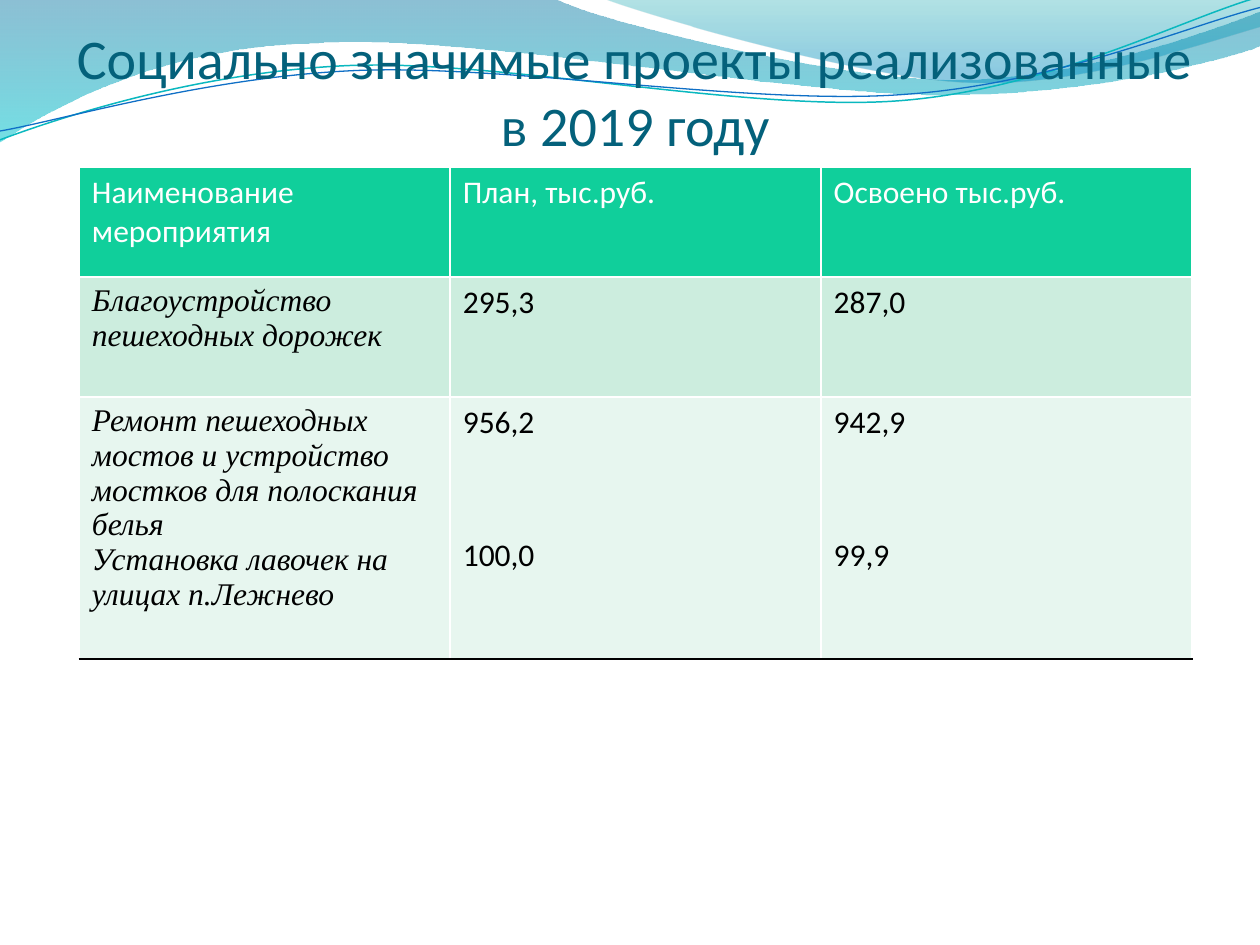
import math

import lxml.etree
import pptx
import pptx.dml.color
import pptx.enum.text
import pptx.oxml.ns
import pptx.util

Inches, Pt = pptx.util.Inches, pptx.util.Pt
RGB = pptx.dml.color.RGBColor
qn = pptx.oxml.ns.qn

WHITE, BLACK = RGB(255, 255, 255), RGB(0, 0, 0)
NAVY = RGB(0x04, 0x61, 0x7B)
TEAL, BLUE = RGB(0x0A, 0xB8, 0xBF), RGB(0x0F, 0x6F, 0xC6)
GREEN, MINT, PALE = RGB(0x10, 0xCF, 0x9B), RGB(0xCC, 0xED, 0xDE), RGB(0xE7, 0xF6, 0xEF)
DEEP, CYAN = RGB(0x00, 0x74, 0xA1), RGB(0x00, 0xC6, 0xCF)
SEA, SKY = RGB(0x00, 0xA1, 0xA9), RGB(0x00, 0x8B, 0xBF)

# Each wave step holds two numbers (a straight line) or six (a Bezier curve).
# Bands: start, steps, gradient stops (position %, colour, opacity %).
BANDS = [
    ((0, 0), [(4.4, -0.01), (4.76, 0.17, 6.64, 0.63, 7.58, 0.63),
              (8.53, 0.63, 9.58, 0.26, 10, 0.09), (10.01, 0.36),
              (9.83, 0.44, 8.7, 0.76, 7.46, 0.75),
              (6.22, 0.75, 3.82, 0.28, 2.57, 0.34),
              (1.29, 0.36, 0.46, 0.83, -0.01, 1.13), (0, 0)],
     [(0, DEEP, 45), (100, CYAN, 55)]),
    ((4.79, -0.01), [(5.09, 0.11, 6.82, 0.62, 7.69, 0.65),
                     (8.56, 0.69, 9.61, 0.32, 10, 0.21), (10, 0), (4.79, -0.01)],
     [(0, SEA, 30), (80, SKY, 45)]),
]
# Lines: start, steps, middle of the box, colour, width
LINES = [
    ((0, 1.11), [(0.48, 0.93, 1.58, 0.57, 2.77, 0.52),
                 (3.95, 0.47, 5.93, 0.89, 7.13, 0.8),
                 (8.33, 0.71, 9.38, 0.15, 9.98, -0.02)], (4.99, 0.58), TEAL, 0.85),
    ((0, 1.04), [(0.47, 0.96, 1.64, 0.61, 2.83, 0.56),
                 (4.03, 0.51, 5.97, 0.84, 7.17, 0.75),
                 (8.36, 0.67, 9.41, 0.21, 10, 0.06)], (5, 0.59), BLUE, 0.75),
]
TILT = 2.7

# Each cell is a list of paragraphs.
ROWS = [
    [["Наименование мероприятия"], ["План, тыс.руб."], ["Освоено тыс.руб."]],
    [["Благоустройство пешеходных дорожек"], ["295,3"], ["287,0"]],
    [["Ремонт пешеходных мостов и устройство мостков для полоскания белья",
      "Установка лавочек на улицах п.Лежнево"],
     ["956,2", "100,0"], ["942,9", "99,9"]],
]
HEIGHTS = [0.87, 0.95, 2.08]
FILLS = [GREEN, MINT, PALE]


def turn(point, middle):
    """Turn a point clockwise about the middle by the tilt of the lines."""
    angle = math.radians(TILT)
    x, y = point[0] - middle[0], point[1] - middle[1]
    return (middle[0] + x * math.cos(angle) - y * math.sin(angle),
            middle[1] + x * math.sin(angle) + y * math.cos(angle))


def bend(shape, steps):
    """Join each three points of a curved step into one Bezier curve."""
    lines = list(shape._element.iter(qn("a:lnTo")))
    for step in steps:
        used, lines = lines[:len(step) // 2], lines[len(step) // 2:]
        if len(used) == 3:
            curve = lxml.etree.Element(qn("a:cubicBezTo"))
            used[0].addprevious(curve)
            for line in used:
                curve.append(line[0])
                line.getparent().remove(line)


def add_path(slide, left, top, start, steps, middle=None):
    points = [start]
    for step in steps:
        points += zip(step[::2], step[1::2])
    if middle:
        points = [turn(point, middle) for point in points]
    points = [(Inches(left + x), Inches(top + y)) for x, y in points]
    build = slide.shapes.build_freeform(*points[0])
    build.add_line_segments(points[1:], close=middle is None)
    shape = build.convert_to_shape()
    bend(shape, steps)
    shape.shadow.inherit = False
    return shape


def fade(shape, stops):
    """Fill a shape from top to bottom with partly clear colours."""
    shape.fill.gradient()
    grad = shape._element.spPr.find(qn("a:gradFill"))
    for child in list(grad):
        grad.remove(child)
    group = lxml.etree.SubElement(grad, qn("a:gsLst"))
    for place, color, alpha in stops:
        stop = lxml.etree.SubElement(group, qn("a:gs"), pos=str(place * 1000))
        tint = lxml.etree.SubElement(stop, qn("a:srgbClr"), val=str(color))
        lxml.etree.SubElement(tint, qn("a:alpha"), val=str(alpha * 1000))
    lxml.etree.SubElement(grad, qn("a:lin"), ang="5400000", scaled="0")


def add_waves(slide, left, top):
    for start, steps, stops in BANDS:
        band = add_path(slide, left, top, start, steps)
        fade(band, stops)
        band.line.fill.background()
    for start, steps, middle, color, width in LINES:
        wave = add_path(slide, left, top, start, steps, middle)
        wave.rotation = 360 - TILT
        wave.fill.background()
        wave.line.color.rgb = color
        wave.line.width = Pt(width)


def style(para, name, size, color, italic=False):
    font = para.font
    font.name, font.size, font.italic = name, Pt(size), italic
    font.bold = False
    font.color.rgb = color


def add_title(slide, left, top, width, height):
    box = slide.shapes.add_textbox(Inches(left), Inches(top), Inches(width), Inches(height))
    frame = box.text_frame
    frame.word_wrap = True
    frame.vertical_anchor = pptx.enum.text.MSO_ANCHOR.BOTTOM
    frame.margin_left = frame.margin_right = frame.margin_bottom = 0
    frame.margin_top = Inches(0.05)
    para = frame.paragraphs[0]
    para.text = "Социально значимые проекты реализованные в 2019 году"
    para.alignment = pptx.enum.text.PP_ALIGN.CENTER
    style(para, "Calibri", 32, NAVY)


def set_edges(cell, last):
    """Draw white cell borders, with a black one under the last row."""
    props = cell._tc.get_or_add_tcPr()
    for i, side in enumerate(("lnL", "lnR", "lnT", "lnB")):
        edge = lxml.etree.Element(qn("a:" + side), w=str(Pt(1)))
        fill = lxml.etree.SubElement(edge, qn("a:solidFill"))
        color = BLACK if last and side == "lnB" else WHITE
        lxml.etree.SubElement(fill, qn("a:srgbClr"), val=str(color))
        props.insert(i, edge)


def fill_cell(cell, texts, row, col):
    cell.fill.solid()
    cell.fill.fore_color.rgb = FILLS[row]
    set_edges(cell, row == len(ROWS) - 1)
    label = row > 0 and col == 0
    frame = cell.text_frame
    for i, text in enumerate(texts):
        para = frame.add_paragraph() if i else frame.paragraphs[0]
        para.text = text
        style(para, "Times New Roman" if label else "Calibri", 18,
              BLACK if row else WHITE, label)
        if i and not label:
            para.space_before = Pt(54)


def add_grid(slide, left, top, width):
    frame = slide.shapes.add_table(len(ROWS), len(ROWS[0]), Inches(left), Inches(top),
                                   Inches(width), Inches(sum(HEIGHTS)))
    table = frame.table
    for r, row in enumerate(ROWS):
        table.rows[r].height = Inches(HEIGHTS[r])
        for c, texts in enumerate(row):
            fill_cell(table.cell(r, c), texts, r, c)


def main():
    deck = pptx.Presentation()
    deck.slide_width, deck.slide_height = Inches(10), Inches(7.5)
    slide = deck.slides.add_slide(deck.slide_layouts[6])
    add_waves(slide, 0, 0)
    add_title(slide, 0.5, 0.77, 9.08, 0.48)
    add_grid(slide, 0.63, 1.33, 8.83)
    deck.save("out.pptx")


if __name__ == "__main__":
    main()
